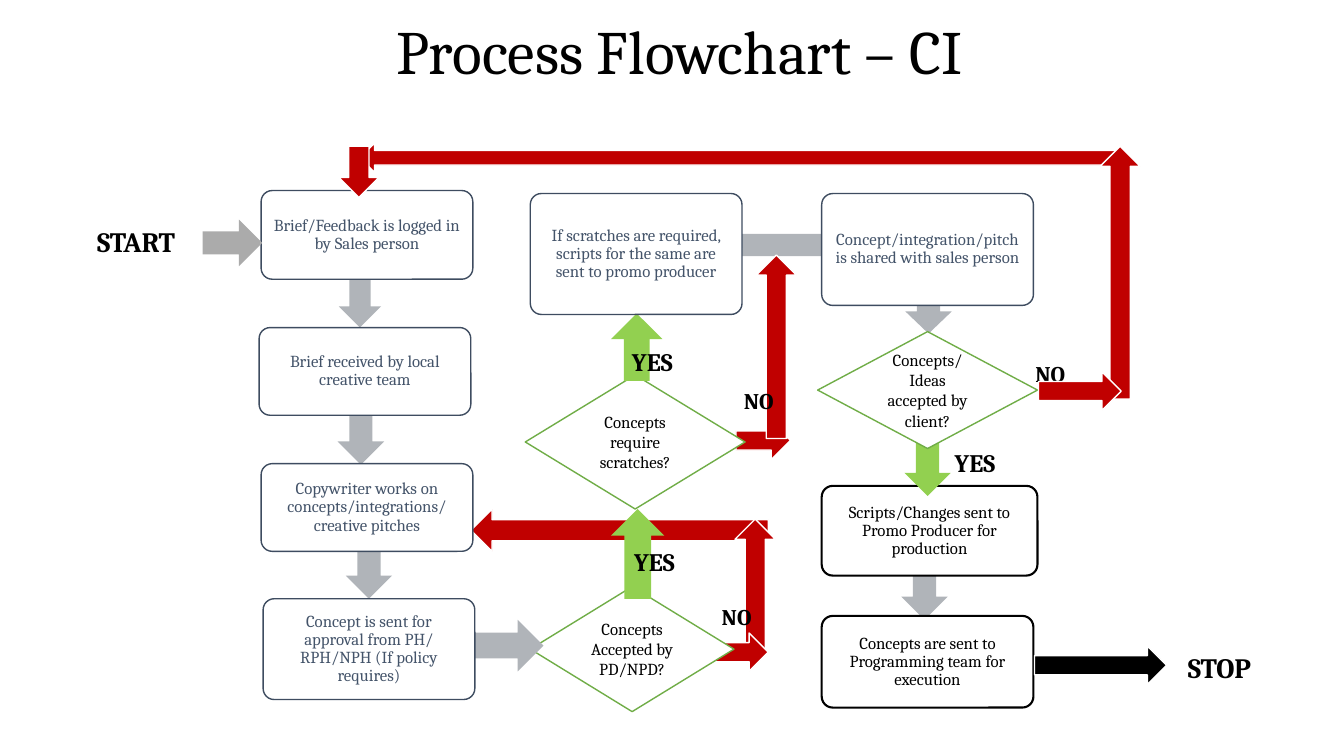
from dataclasses import dataclass

from pptx import Presentation
from pptx.dml.color import RGBColor
from pptx.enum.shapes import MSO_SHAPE as Preset
from pptx.enum.text import MSO_ANCHOR as Anchor, MSO_AUTO_SIZE as AutoSize, PP_ALIGN as Align
from pptx.shapes.autoshape import Shape
from pptx.slide import Slide
from pptx.text.text import TextFrame
from pptx.util import Emu, Pt

PX_PER_INCH = 100
FONT = "Cambria"
CORNER = 11
COLORS = {
    "white": "FFFFFF", "black": "000000", "slate": "3E4C60", "ink": "44546A",
    "grey": "B0B4B9", "start": "ABABAB", "red": "C00000", "lime": "92D050",
    "green": "70AD47",
}
ARROWS = {
    "up": Preset.UP_ARROW, "down": Preset.DOWN_ARROW,
    "left": Preset.LEFT_ARROW, "right": Preset.RIGHT_ARROW,
}


@dataclass(frozen=True)
class Item:
    left: int
    top: int
    width: int
    height: int


@dataclass(frozen=True)
class Arrow(Item):
    heading: str
    color: str = "grey"


@dataclass(frozen=True)
class Bar(Item):
    color: str = "grey"


@dataclass(frozen=True)
class Step(Item):
    text: str
    final: bool = False


@dataclass(frozen=True)
class Decision(Item):
    text: str


@dataclass(frozen=True)
class Label(Item):
    text: str
    size: int
    align: Align = Align.LEFT


# Back to front
FLOW: list[Item] = [
    Arrow(730, 418, 54, 38, "right", "red"),
    Arrow(467, 505, 295, 42, "left", "red"),
    Arrow(729, 515, 40, 134, "up", "red"),
    Arrow(708, 628, 54, 38, "right", "red"),
    Arrow(894, 507, 46, 108, "down"),
    Arrow(343, 486, 46, 108, "down"),
    Decision(526, 582, 202, 124, "Concepts Accepted by PD/NPD?"),
    Decision(521, 372, 218, 133, "Concepts require scratches?"),
    Step(815, 482, 214, 89, "Scripts/Changes sent to Promo Producer for production", True),
    Arrow(898, 287, 46, 44, "down"),
    Arrow(606, 505, 53, 89, "up", "lime"),
    Arrow(336, 269, 42, 56, "down"),
    Step(259, 189, 210, 88, "Brief/Feedback is logged in by Sales person"),
    Arrow(335, 353, 46, 108, "down"),
    Step(257, 325, 210, 87, "Brief received by local creative team"),
    Arrow(261, 615, 278, 51, "right"),
    Step(259, 460, 210, 87, "Copywriter works on concepts/integrations/ creative pitches"),
    Arrow(606, 311, 51, 67, "up", "lime"),
    Step(261, 594, 210, 100, "Concept is sent for approval from PH/ RPH/NPH (If policy requires)"),
    Bar(581, 232, 278, 22),
    Step(526, 192, 210, 120,
         "If scratches are required, scripts for the same are sent to promo producer"),
    Step(815, 192, 210, 111, "Concept/integration/pitch is shared with sales person"),
    Arrow(897, 384, 46, 108, "down", "lime"),
    Decision(811, 329, 218, 116, "Concepts/ Ideas accepted by client?"),
    Step(815, 611, 210, 91, "Concepts are sent to Programming team for execution", True),
    Label(1017, 352, 64, 31, "NO", 16),
    Label(617, 339, 84, 34, "YES", 18),
    Label(619, 537, 84, 34, "YES", 18),
    Label(706, 593, 64, 31, "NO", 16),
    Arrow(750, 253, 40, 182, "up", "red"),
    Label(728, 379, 64, 31, "NO", 16),
    Label(937, 439, 84, 34, "YES", 18),
    Arrow(357, 142, 755, 29, "left", "red"),
    Arrow(1091, 145, 40, 251, "up", "red"),
    Arrow(1030, 369, 82, 38, "right", "red"),
    Arrow(336, 145, 40, 51, "down", "red"),
    Label(67, 218, 136, 43, "START", 20, Align.CENTER),
    Arrow(201, 218, 59, 46, "right", "start"),
    Arrow(1026, 641, 131, 38, "right", "black"),
    Label(1144, 640, 131, 43, "STOP", 20, Align.CENTER),
]


def px(length: int) -> Emu:
    return Emu(length * 914400 // PX_PER_INCH)


def rgb(name: str) -> RGBColor:
    return RGBColor.from_string(COLORS[name])


def write(frame: TextFrame, text: str, *, size: int, color: str = "black", bold: bool = False,
          align: Align = Align.CENTER, anchor: Anchor = Anchor.MIDDLE,
          spacing: float = 1.0) -> None:
    frame.word_wrap = True
    frame.vertical_anchor = anchor
    para = frame.paragraphs[0]
    para.alignment = align
    para.line_spacing = spacing
    span = para.add_run()
    span.text = text
    span.font.name = FONT
    span.font.size = Pt(size)
    span.font.bold = bold
    span.font.color.rgb = rgb(color)


def add_box(page: Slide, preset: Preset, item: Item, *, fill: str,
            line: str | None = None, weight: float = 1) -> Shape:
    box = page.shapes.add_shape(preset, px(item.left), px(item.top),
                                px(item.width), px(item.height))
    box.shadow.inherit = False
    box.fill.solid()
    box.fill.fore_color.rgb = rgb(fill)
    if line:
        box.line.color.rgb = rgb(line)
        box.line.width = Pt(weight)
    else:
        box.line.fill.background()
    return box


def add_step(page: Slide, step: Step) -> None:
    line, ink, weight, inset = ("black", "black", 1.5, 12) if step.final else ("slate", "ink", 1, 9)
    box = add_box(page, Preset.ROUNDED_RECTANGLE, step, fill="white", line=line, weight=weight)
    box.adjustments[0] = CORNER / step.height
    frame = box.text_frame
    frame.margin_left = frame.margin_right = px(inset)
    frame.margin_top = frame.margin_bottom = px(inset)
    write(frame, step.text, size=12, color=ink, spacing=0.9)


def add_label(page: Slide, label: Label) -> None:
    box = page.shapes.add_textbox(px(label.left), px(label.top), px(label.width), px(label.height))
    box.text_frame.auto_size = AutoSize.SHAPE_TO_FIT_TEXT
    write(box.text_frame, label.text, size=label.size, bold=True,
          align=label.align, anchor=Anchor.TOP)


def add_item(page: Slide, item: Item) -> None:
    match item:
        case Arrow():
            outline = "white" if item.color in ("red", "black") else None
            add_box(page, ARROWS[item.heading], item, fill=item.color, line=outline)
        case Bar():
            add_box(page, Preset.RECTANGLE, item, fill=item.color)
        case Step():
            add_step(page, item)
        case Decision():
            box = add_box(page, Preset.FLOWCHART_DECISION, item, fill="white", line="green")
            write(box.text_frame, item.text, size=12)
        case Label():
            add_label(page, item)


def add_title(page: Slide, text: str) -> None:
    title = page.shapes.title
    title.left, title.top, title.width, title.height = px(108), px(13), px(1132), px(82)
    write(title.text_frame, text, size=44, spacing=0.9)


def main() -> None:
    deck = Presentation()
    deck.slide_width, deck.slide_height = px(1333), px(750)
    page = deck.slides.add_slide(deck.slide_layouts.get_by_name("Title Only"))
    add_title(page, "Process Flowchart – CI")
    for item in FLOW:
        add_item(page, item)
    deck.save("out.pptx")


if __name__ == "__main__":
    main()
